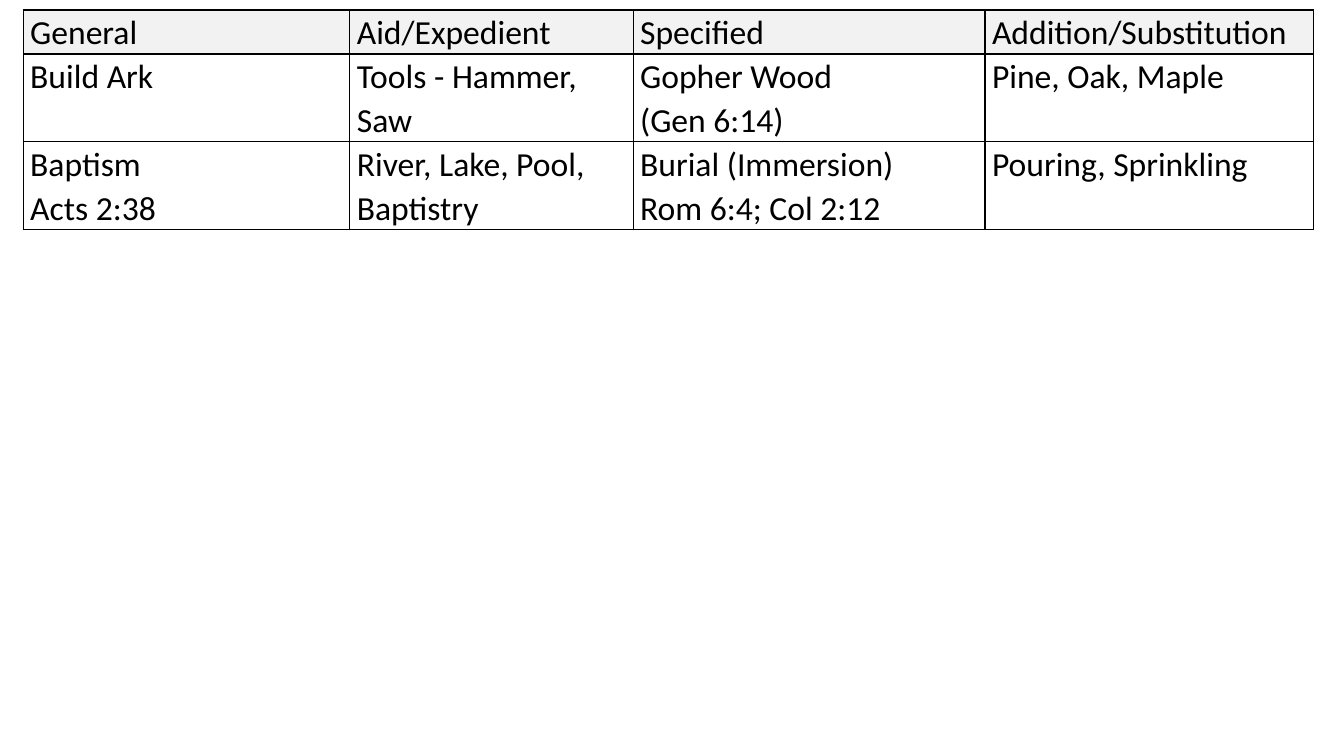
from dataclasses import dataclass

from lxml.etree import SubElement as Sub
from pptx import Presentation
from pptx.dml.color import RGBColor as Rgb
from pptx.oxml.ns import qn
from pptx.util import Inches, Pt


@dataclass(frozen=True)
class Theme:
    font: str = "Calibri"
    size: int = 24
    lead: float = 1.07
    ink: str = "000000"
    head: str = "F2F2F2"
    rule: int = 1
    pad: float = 0.07


THEME = Theme()
WIDE, HIGH = 13.33, 7.5
LEFT, TOP = 0.23, 0.1
COLS = [3.24, 2.81, 3.49, 3.26]
ROWS = [0.42, 0.86, 0.86]
DATA = [
    ["General", "Aid/Expedient", "Specified", "Addition/Substitution"],
    ["Build Ark", "Tools - Hammer, Saw", "Gopher Wood\n(Gen 6:14)",
     "Pine, Oak, Maple"],
    ["Baptism\nActs 2:38", "River, Lake, Pool, Baptistry",
     "Burial (Immersion)\nRom 6:4; Col 2:12", "Pouring, Sprinkling"],
]


def add_text(frame, text):
    for num, line in enumerate(text.split("\n")):
        para = frame.add_paragraph() if num else frame.paragraphs[0]
        para.line_spacing = THEME.lead
        run = para.add_run()
        run.text = line
        run.font.name = THEME.font
        run.font.size = Pt(THEME.size)
        run.font.bold = False
        run.font.color.rgb = Rgb.from_string(THEME.ink)


def add_edges(cell):
    props = cell._tc.get_or_add_tcPr()
    for side in "LRTB":
        edge = Sub(props, qn(f"a:ln{side}"), w=str(Pt(THEME.rule)))
        fill = Sub(edge, qn("a:solidFill"))
        Sub(fill, qn("a:srgbClr"), val=THEME.ink)


def fill_cell(cell, text, head):
    cell.margin_left = cell.margin_right = Inches(THEME.pad)
    cell.margin_top = cell.margin_bottom = 0
    add_edges(cell)
    if head:
        cell.fill.solid()
        cell.fill.fore_color.rgb = Rgb.from_string(THEME.head)
    else:
        cell.fill.background()
    add_text(cell.text_frame, text)


def add_grid(slide):
    box = [Inches(n) for n in (LEFT, TOP, sum(COLS), sum(ROWS))]
    grid = slide.shapes.add_table(len(ROWS), len(COLS), *box).table
    grid.horz_banding = False
    grid.first_row = False
    for col, width in zip(grid.columns, COLS):
        col.width = Inches(width)
    for num, (row, height) in enumerate(zip(grid.rows, ROWS)):
        row.height = Inches(height)
        for cell, text in zip(row.cells, DATA[num]):
            fill_cell(cell, text, num == 0)


def main():
    deck = Presentation()
    deck.slide_width, deck.slide_height = Inches(WIDE), Inches(HIGH)
    slide = deck.slides.add_slide(deck.slide_layouts[6])
    add_grid(slide)
    deck.save("out.pptx")


if __name__ == "__main__":
    main()
